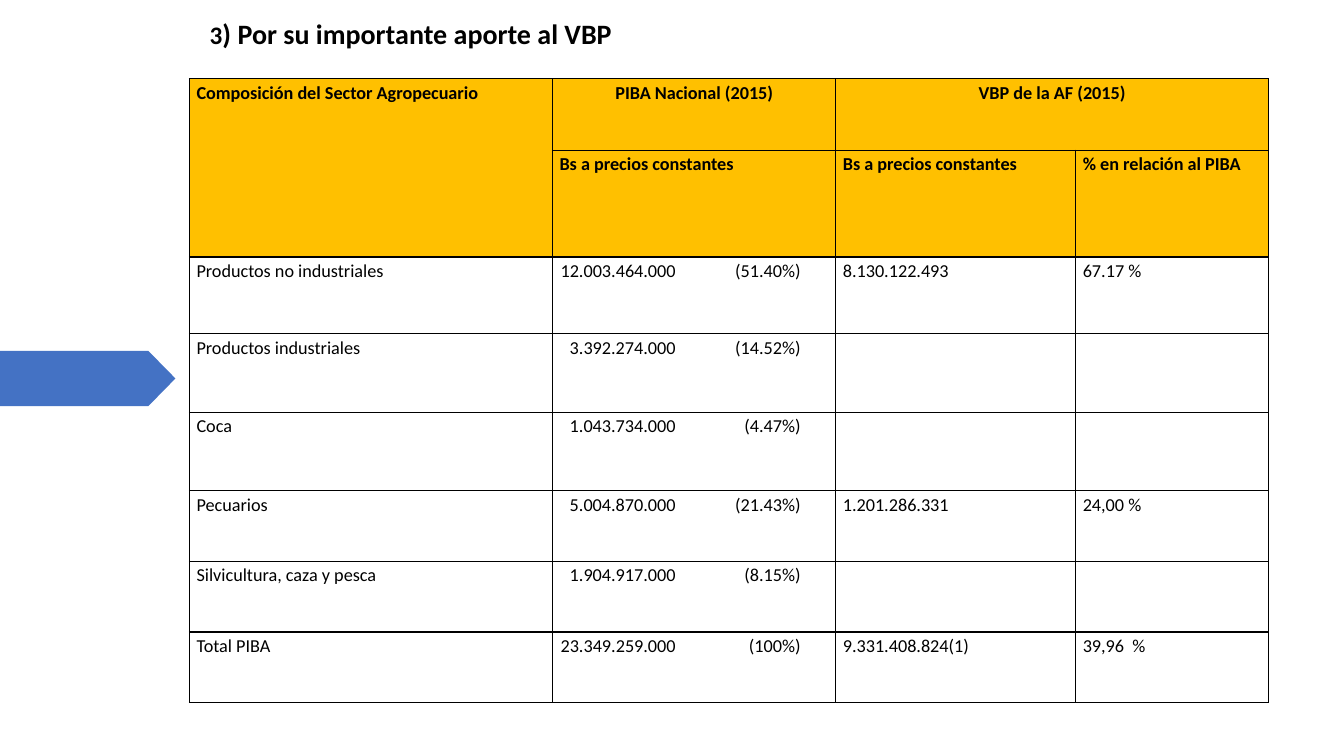
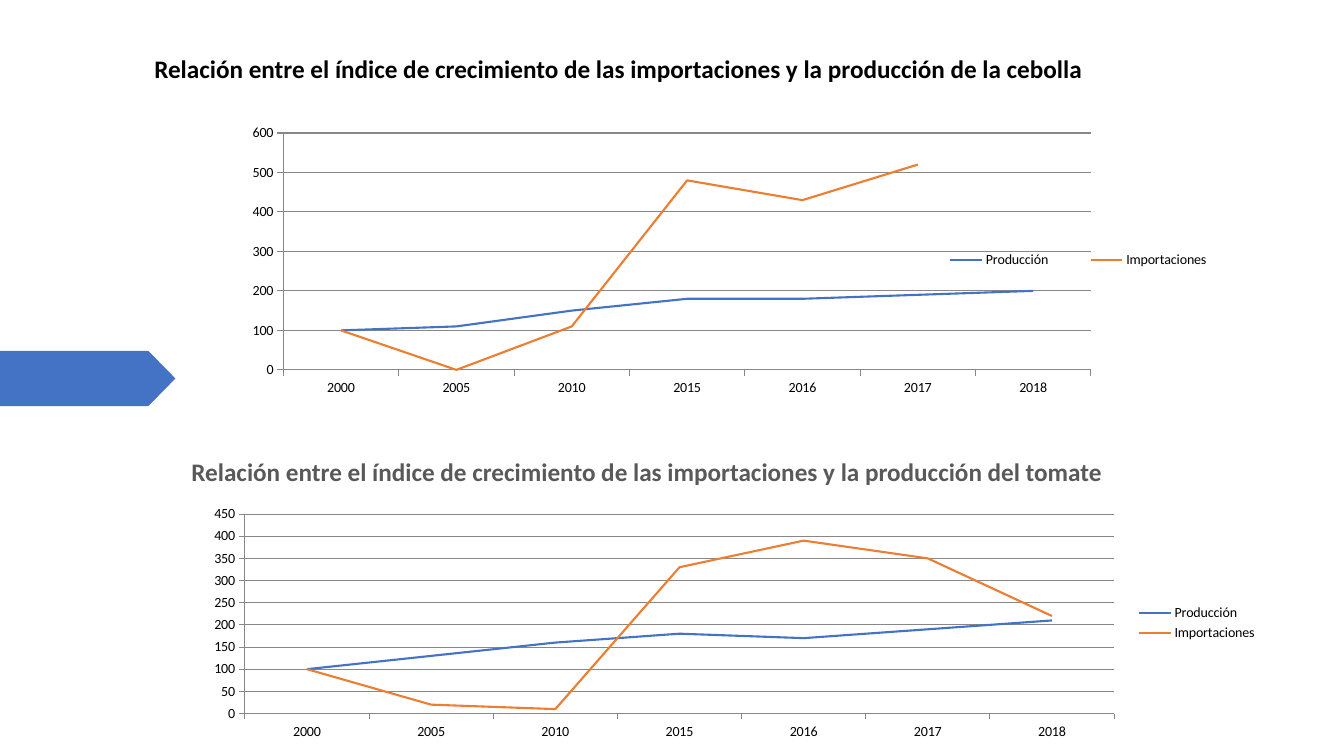
from lxml.etree import SubElement
from pptx import Presentation
from pptx.chart.data import CategoryChartData
from pptx.dml.color import RGBColor
from pptx.enum.chart import XL_CHART_TYPE, XL_LEGEND_POSITION, XL_TICK_MARK
from pptx.enum.shapes import MSO_SHAPE
from pptx.enum.text import MSO_ANCHOR, MSO_AUTO_SIZE, PP_ALIGN
from pptx.oxml import parse_xml
from pptx.oxml.ns import nsdecls, qn
from pptx.util import Inches, Pt

FONT = "Calibri"
COLORS = {
    "black": "000000",
    "white": "FFFFFF",
    "gray": "595959",
    "grid": "878787",
    "blue": "4472C4",
    "orange": "ED7D31",
    "gold": "FFC000",
}
TITLE_ONLY = 5

COLUMN_WIDTHS = [3.6, 2.81, 2.38, 1.91]
ROW_HEIGHTS = [0.71, 1.06, 0.76, 0.78, 0.78, 0.7, 0.7, 0.7]
HEADER_ROWS = 2
AMOUNT_TABS = [1.15, 2.39]
SECTOR_ROWS = [
    ["Composición del Sector Agropecuario", "PIBA Nacional (2015)", "VBP de la AF (2015)", ""],
    ["", "Bs a precios constantes", "Bs a precios constantes", "% en relación al PIBA"],
    ["Productos no industriales", "\t12.003.464.000\t(51.40%)", "8.130.122.493", "67.17 %"],
    ["Productos industriales", "\t3.392.274.000\t(14.52%)", "", ""],
    ["Coca", "\t1.043.734.000\t(4.47%)", "", ""],
    ["Pecuarios", "\t5.004.870.000\t(21.43%)", "1.201.286.331", "24,00 %"],
    ["Silvicultura, caza y pesca", "\t1.904.917.000\t(8.15%)", "", ""],
    ["Total PIBA", "\t23.349.259.000\t(100%)", "9.331.408.824(1)", "39,96  %"],
]

YEARS = ["2000", "2005", "2010", "2015", "2016", "2017", "2018"]
ONION = {
    "Producción": [100, 110, 150, 180, 180, 190, 200],
    "Importaciones": [100, 0, 110, 480, 430, 520, None],
}
TOMATO = {
    "Producción": [100, 130, 160, 180, 170, 190, 210],
    "Importaciones": [100, 20, 10, 330, 390, 350, 220],
}
SERIES_COLORS = {"Producción": "blue", "Importaciones": "orange"}


def rgb(name):
    return RGBColor.from_string(COLORS[name])


def paint(fill, color):
    fill.solid()
    fill.fore_color.rgb = rgb(color)


def style_font(font, size, color="black", bold=False):
    font.name, font.size, font.bold = FONT, Pt(size), bold
    font.color.rgb = rgb(color)


def write(frame, runs, color="black", bold=False, align=PP_ALIGN.LEFT, spacing=0.9, after=0):
    """Fill a text frame with one paragraph of (text, size) runs."""
    paragraph = frame.paragraphs[0]
    paragraph.alignment = align
    paragraph.line_spacing = spacing
    paragraph.space_after = Pt(after)
    for text, size in runs:
        run = paragraph.add_run()
        run.text = text
        style_font(run.font, size, color, bold)
    return paragraph


def write_heading(shape, box, runs, color="black"):
    shape.left, shape.top, shape.width, shape.height = map(Inches, box)
    frame = shape.text_frame
    frame.word_wrap = True
    frame.auto_size = MSO_AUTO_SIZE.NONE
    frame.vertical_anchor = MSO_ANCHOR.MIDDLE
    write(frame, runs, color=color, bold=True)


def add_titled_slide(prs, box, runs):
    slide = prs.slides.add_slide(prs.slide_layouts[TITLE_ONLY])
    write_heading(slide.shapes.title, box, runs)
    arrow = slide.shapes.add_shape(
        MSO_SHAPE.PENTAGON, Inches(0), Inches(3.48), Inches(1.74), Inches(0.55))
    arrow.adjustments[0] = 0.49
    arrow.shadow.inherit = False
    paint(arrow.fill, "blue")
    arrow.line.fill.background()
    return slide


def add_borders(cell, color="black", width=1):
    properties = cell._tc.get_or_add_tcPr()
    for index, side in enumerate(("lnL", "lnR", "lnT", "lnB")):
        properties.insert(index, parse_xml(
            f'<a:{side} {nsdecls("a")} w="{Pt(width)}"><a:solidFill>'
            f'<a:srgbClr val="{COLORS[color]}"/></a:solidFill></a:{side}>'))


def add_right_tabs(paragraph, stops):
    tabs = SubElement(paragraph._p.get_or_add_pPr(), qn("a:tabLst"))
    for stop in stops:
        SubElement(tabs, qn("a:tab"), pos=str(Inches(stop)), algn="r")


def format_cell(cell, text, header, centered):
    paint(cell.fill, "gold" if header else "white")
    add_borders(cell)
    cell.margin_left = cell.margin_right = Inches(0.07)
    cell.margin_top = cell.margin_bottom = 0
    if text:
        paragraph = write(
            cell.text_frame, [(text, 13)], bold=header, spacing=1.15, after=10,
            align=PP_ALIGN.CENTER if centered else PP_ALIGN.LEFT)
        if "\t" in text:
            add_right_tabs(paragraph, AMOUNT_TABS)


def add_sector_table(slide):
    table = slide.shapes.add_table(
        len(ROW_HEIGHTS), len(COLUMN_WIDTHS), Inches(1.88), Inches(0.78),
        Inches(sum(COLUMN_WIDTHS)), Inches(sum(ROW_HEIGHTS))).table
    table.first_row = table.horz_banding = False
    for column, width in zip(table.columns, COLUMN_WIDTHS):
        column.width = Inches(width)
    for row, height in zip(table.rows, ROW_HEIGHTS):
        row.height = Inches(height)
    table.cell(0, 0).merge(table.cell(1, 0))
    table.cell(0, 2).merge(table.cell(0, 3))
    for r, texts in enumerate(SECTOR_ROWS):
        for c, text in enumerate(texts):
            format_cell(table.cell(r, c), text, header=r < HEADER_ROWS,
                        centered=r == 0 and c > 0)


def manual_layout(box, chart_box, inner=False):
    """Layout element that places a slide box, in inches, inside a chart."""
    left, top, width, height = chart_box
    fractions = {
        "x": (box[0] - left) / width,
        "y": (box[1] - top) / height,
        "w": box[2] / width,
        "h": box[3] / height,
    }
    target = '<c:layoutTarget val="inner"/>' if inner else ""
    modes = "".join(f'<c:{axis}Mode val="edge"/>' for axis in "xy")
    sizes = "".join(f'<c:{key} val="{value:.4f}"/>' for key, value in fractions.items())
    return parse_xml(f'<c:layout {nsdecls("c")}><c:manualLayout>{target}{modes}{sizes}'
                     '</c:manualLayout></c:layout>')


def place_plot(chart, layout):
    area = chart._chartSpace.chart.plotArea
    for existing in area.findall(qn("c:layout")):
        area.remove(existing)
    area.insert(0, layout)


def place_legend(chart, layout):
    chart.has_legend = True
    legend = chart.legend
    legend.position = XL_LEGEND_POSITION.RIGHT
    legend.include_in_layout = False
    for existing in legend._element.findall(qn("c:layout")):
        legend._element.remove(existing)
    legend._element.find(qn("c:legendPos")).addnext(layout)


def style_line(line, color, width):
    line.color.rgb = rgb(color)
    line.width = Pt(width)


def add_growth_chart(slide, box, plot_box, legend_box, series, top_value, step):
    data = CategoryChartData()
    data.categories = YEARS
    for name, values in series.items():
        data.add_series(name, values)
    chart = slide.shapes.add_chart(XL_CHART_TYPE.LINE, *map(Inches, box), data).chart
    chart.has_title = False
    style_font(chart.font, 10)
    place_plot(chart, manual_layout(plot_box, box, inner=True))
    place_legend(chart, manual_layout(legend_box, box))

    chart.plots[0].vary_by_categories = False
    for line in chart.plots[0].series:
        line.smooth = False
        style_line(line.format.line, SERIES_COLORS[line.name], 1.5)

    for axis in (chart.category_axis, chart.value_axis):
        axis.major_tick_mark = XL_TICK_MARK.OUTSIDE
        axis.minor_tick_mark = XL_TICK_MARK.NONE
        style_line(axis.format.line, "grid", 0.75)
    values = chart.value_axis
    values.minimum_scale, values.maximum_scale, values.major_unit = 0, top_value, step
    values.has_major_gridlines = True
    style_line(values.major_gridlines.format.line, "grid", 0.75)


def build_contribution_slide(prs):
    slide = add_titled_slide(prs, (1.98, 0.13, 10.6, 0.45),
                             [("3", 18), (") Por su importante aporte al VBP", 20)])
    add_sector_table(slide)


def build_imports_slide(prs):
    heading = "Relación entre el índice de crecimiento de las importaciones y la producción "
    slide = add_titled_slide(prs, (1.43, 0.45, 11.15, 0.5), [(heading + "de la cebolla", 18)])
    tomato_box = (1.8, 4.45, 10.78, 0.5)
    write_heading(slide.shapes.add_textbox(*map(Inches, tomato_box)), tomato_box,
                  [(heading + "del tomate", 18)], color="gray")
    add_growth_chart(slide, (2.31, 1.18, 10.03, 2.79), (2.81, 1.32, 8.01, 2.35),
                     (9.05, 2.45, 3.4, 0.26), ONION, 600, 100)
    add_growth_chart(slide, (1.91, 4.97, 10.67, 2.41), (2.43, 5.1, 8.62, 1.98),
                     (11.22, 5.96, 1.3, 0.44), TOMATO, 450, 50)


def main():
    prs = Presentation()
    prs.slide_width, prs.slide_height = Inches(13.33), Inches(7.5)
    build_contribution_slide(prs)
    build_imports_slide(prs)
    prs.save("out.pptx")


if __name__ == "__main__":
    main()
